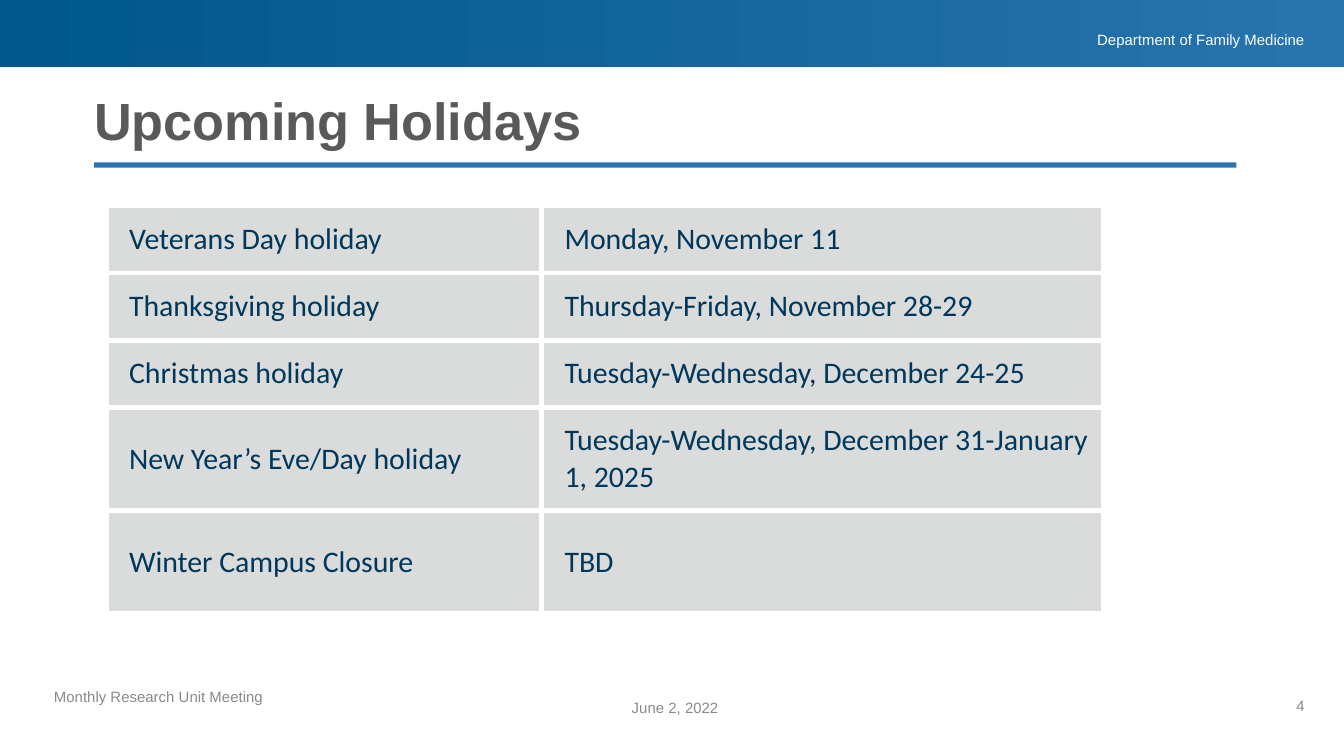
from dataclasses import dataclass

import pptx
import pptx.dml.color
import pptx.enum.shapes
import pptx.enum.text
import pptx.oxml
import pptx.oxml.ns
import pptx.util
from lxml import etree

Cm = pptx.util.Cm
Pt = pptx.util.Pt
RGBColor = pptx.dml.color.RGBColor
Align = pptx.enum.text.PP_ALIGN
Anchor = pptx.enum.text.MSO_ANCHOR

DARK_BLUE = RGBColor(0x00, 0x57, 0x8B)
BLUE = RGBColor(0x27, 0x74, 0xAE)
NAVY = RGBColor(0x00, 0x37, 0x5B)
WHITE = RGBColor(0xFF, 0xFF, 0xFF)
TITLE_GREY = RGBColor(0x58, 0x59, 0x5B)
FOOTER_GREY = RGBColor(0x89, 0x89, 0x89)
CELL_GREY = RGBColor(0x87, 0x8E, 0x8B)

SLIDE_WIDTH, SLIDE_HEIGHT = 25.4, 14.29
CONTENT_LEFT, CONTENT_WIDTH = 1.78, 21.59
COLUMN_WIDTHS = (8.23, 10.62)
ROW_HEIGHTS = (1.27, 1.27, 1.27, 1.95, 1.95)
CELL_OPACITY = 30
BORDER_POINTS = 3

HOLIDAYS = (
    ("Veterans Day holiday", "Monday, November 11"),
    ("Thanksgiving holiday", "Thursday-Friday, November 28-29"),
    ("Christmas holiday", "Tuesday-Wednesday, December 24-25"),
    ("New Year’s Eve/Day holiday", "Tuesday-Wednesday, December 31-January 1, 2025"),
    ("Winter Campus Closure", "TBD"),
)


@dataclass(frozen=True)
class Label:
    """A small line of text; lengths in centimetres."""
    text: str
    left: float
    top: float
    width: float
    height: float
    color: RGBColor = FOOTER_GREY
    align: Align = Align.LEFT
    line_spacing: float = 0.9


LABELS = (
    Label("Department of Family Medicine", 18.29, 0.58, 6.37, 0.36,
          color=WHITE, align=Align.RIGHT, line_spacing=1.0),
    Label("Monthly Research Unit Meeting", 1.02, 13.03, 9.91, 1.02),
    Label("June 2, 2022", 11.94, 13.21, 5.72, 1.07, line_spacing=1.0),
    Label("4", 23.39, 13.21, 1.27, 1.02, align=Align.RIGHT),
)


def set_font(font, name: str, size: float, color: RGBColor, bold: bool = False) -> None:
    for attribute, value in {"name": name, "size": Pt(size), "bold": bold}.items():
        setattr(font, attribute, value)
    font.color.rgb = color


def set_frame(frame, anchor: Anchor) -> None:
    """Wrap the text and remove the inner margins."""
    formats = {"word_wrap": True, "vertical_anchor": anchor, "margin_left": 0,
               "margin_top": 0, "margin_right": 0, "margin_bottom": 0}
    for attribute, value in formats.items():
        setattr(frame, attribute, value)


def add_bar(slide, left: float, top: float, width: float, height: float):
    bar = slide.shapes.add_shape(pptx.enum.shapes.MSO_SHAPE.RECTANGLE,
                                 Cm(left), Cm(top), Cm(width), Cm(height))
    bar.shadow.inherit = False
    bar.line.fill.background()
    bar.fill.solid()
    bar.fill.fore_color.rgb = BLUE
    return bar


def add_header(slide) -> None:
    header = add_bar(slide, 0, 0, SLIDE_WIDTH, 1.27)
    header.fill.gradient()
    header.fill.gradient_angle = 0
    for stop, position, color in zip(header.fill.gradient_stops, (0, 1), (DARK_BLUE, BLUE)):
        stop.position = position
        stop.color.rgb = color


def add_label(slide, label: Label) -> None:
    box = slide.shapes.add_textbox(Cm(label.left), Cm(label.top),
                                   Cm(label.width), Cm(label.height))
    set_frame(box.text_frame, Anchor.TOP)
    paragraph = box.text_frame.paragraphs[0]
    paragraph.text = label.text
    paragraph.alignment = label.align
    paragraph.line_spacing = label.line_spacing
    set_font(paragraph.font, "Arial", 8, label.color)


def format_title(title) -> None:
    title.left, title.top = Cm(CONTENT_LEFT), Cm(1.78)
    title.width, title.height = Cm(CONTENT_WIDTH), Cm(1.09)
    title.text = "Upcoming Holidays"
    set_frame(title.text_frame, Anchor.BOTTOM)
    paragraph = title.text_frame.paragraphs[0]
    paragraph.alignment = Align.LEFT
    paragraph.line_spacing = 0.9
    set_font(paragraph.font, "Arial", 28, TITLE_GREY, bold=True)


def set_borders(cell) -> None:
    properties = cell._tc.get_or_add_tcPr()
    for side in ("lnL", "lnR", "lnT", "lnB"):
        properties.append(pptx.oxml.parse_xml(
            f'<a:{side} {pptx.oxml.ns.nsdecls("a")} w="{Pt(BORDER_POINTS)}">'
            f'<a:solidFill><a:srgbClr val="{WHITE}"/></a:solidFill></a:{side}>'))


def format_cell(cell, text: str) -> None:
    formats = {"text": text, "vertical_anchor": Anchor.MIDDLE, "margin_left": Cm(0.43),
               "margin_top": Cm(0.25), "margin_right": Cm(0.25), "margin_bottom": Cm(0.25)}
    for attribute, value in formats.items():
        setattr(cell, attribute, value)
    set_font(cell.text_frame.paragraphs[0].runs[0].font, "Calibri", 16, NAVY)
    set_borders(cell)
    cell.fill.solid()
    cell.fill.fore_color.rgb = CELL_GREY
    color = cell._tc.tcPr.find(pptx.oxml.ns.qn("a:solidFill"))[0]
    etree.SubElement(color, pptx.oxml.ns.qn("a:alpha"), val=str(CELL_OPACITY * 1000))


def add_holiday_table(slide) -> None:
    table = slide.shapes.add_table(
        len(HOLIDAYS), len(COLUMN_WIDTHS), Cm(2.01), Cm(3.89),
        Cm(sum(COLUMN_WIDTHS)), Cm(sum(ROW_HEIGHTS))).table
    table.first_row = table.horz_banding = False
    for column, width in zip(table.columns, COLUMN_WIDTHS):
        column.width = Cm(width)
    for row, height, texts in zip(table.rows, ROW_HEIGHTS, HOLIDAYS):
        row.height = Cm(height)
        for cell, text in zip(row.cells, texts):
            format_cell(cell, text)


def main() -> None:
    presentation = pptx.Presentation()
    presentation.slide_width = Cm(SLIDE_WIDTH)
    presentation.slide_height = Cm(SLIDE_HEIGHT)
    slide = presentation.slides.add_slide(presentation.slide_layouts[5])
    add_bar(slide, CONTENT_LEFT, 3.07, CONTENT_WIDTH, 0.1)
    add_header(slide)
    for label in LABELS:
        add_label(slide, label)
    format_title(slide.shapes.title)
    add_holiday_table(slide)
    presentation.save("out.pptx")


if __name__ == "__main__":
    main()
